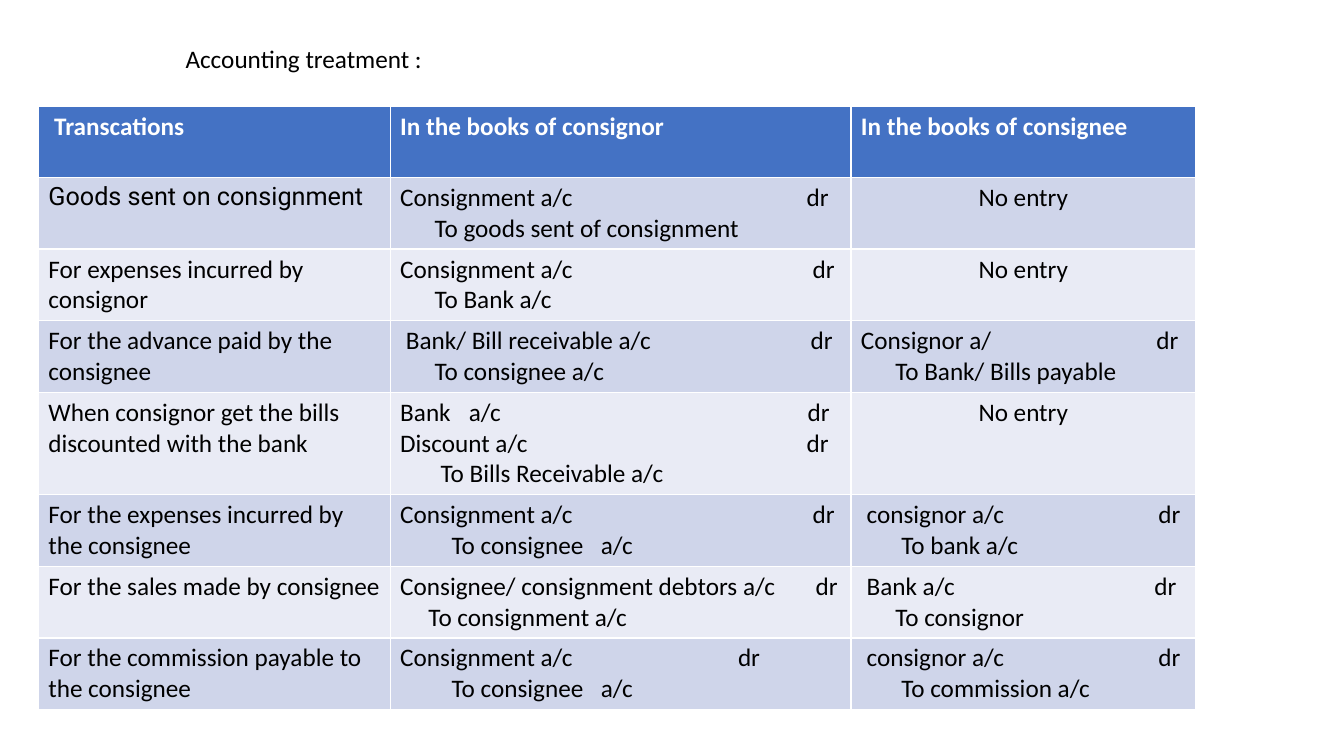
from lxml import etree
from pptx import Presentation
from pptx.dml.color import RGBColor
from pptx.enum.text import MSO_ANCHOR, MSO_AUTO_SIZE, PP_ALIGN
from pptx.oxml.ns import qn
from pptx.util import Inches, Pt

TITLE = "Accounting treatment :"
HEADINGS = [" Transcations", "In the books of consignor", "In the books of consignee"]
NO_ENTRY = [("No entry",)]

# Each journal line is its text followed by its tab stops in inches.
ENTRIES = [
    ("Goods sent on consignment",
     [("Consignment a/c\tdr", 4.03), ("\tTo goods sent of consignment", 0.34)],
     NO_ENTRY),
    ("For expenses incurred by consignor",
     [("Consignment a/c\tdr", 4.09), ("\tTo Bank a/c", 0.34)],
     NO_ENTRY),
    ("For the advance paid by the consignee",
     [(" Bank/ Bill receivable a/c\tdr", 4.07), ("\tTo consignee a/c", 0.34)],
     [("Consignor a/\tdr", 2.93), ("\tTo Bank/ Bills payable", 0.34)]),
    ("When consignor get the bills discounted with the bank",
     [("Bank\ta/c\tdr", 0.68, 4.04), ("Discount a/c\tdr", 4.03),
      ("\tTo Bills Receivable a/c", 0.4)],
     NO_ENTRY),
    ("For the expenses incurred by the consignee",
     [("Consignment a/c\tdr", 4.09), ("\tTo consignee\ta/c", 0.51, 1.99)],
     [(" consignor a/c\tdr", 2.95), ("\tTo bank a/c", 0.4)]),
    ("For the sales made by consignee",
     [("Consignee/ consignment debtors a/c\tdr", 4.12), ("\tTo consignment a/c", 0.28)],
     [(" Bank a/c\tdr", 2.91), ("\tTo consignor", 0.34)]),
    ("For the commission payable to the consignee",
     [("Consignment a/c\tdr", 3.35), ("\tTo consignee\ta/c", 0.51, 1.99)],
     [(" consignor a/c\tdr", 2.95), ("\tTo commission a/c", 0.4)]),
]

COLUMN_WIDTHS = [3.49, 4.57, 3.42]
ROW_HEIGHT, LINE_HEIGHT = 0.7, 0.3
TABLE_LEFT, TABLE_TOP = 0.38, 1.06
FONT, FIRST_ENTRY_FONT = "Calibri", "Roboto"
BLACK = RGBColor(0x00, 0x00, 0x00)
WHITE = RGBColor(0xFF, 0xFF, 0xFF)
HEADER_BLUE = RGBColor(0x44, 0x72, 0xC4)
BANDS = [RGBColor(0xCF, 0xD5, 0xEA), RGBColor(0xE9, 0xEB, 0xF5)]


def add_text(paragraph, text, color=BLACK, bold=False, font=FONT):
    run = paragraph.add_run()
    run.text = text
    run.font.name = font
    run.font.size = Pt(18)
    run.font.bold = bold
    run.font.color.rgb = color


def set_tab_stops(paragraph, stops):
    tab_list = etree.SubElement(paragraph._p.get_or_add_pPr(), qn("a:tabLst"))
    for stop in stops:
        etree.SubElement(tab_list, qn("a:tab"), pos=str(Inches(stop)), algn="l")


def fill_cell(cell, lines, fill, **text_format):
    cell.fill.solid()
    cell.fill.fore_color.rgb = fill
    frame = cell.text_frame
    for index, (text, *stops) in enumerate(lines):
        paragraph = frame.add_paragraph() if index else frame.paragraphs[0]
        if stops:
            set_tab_stops(paragraph, stops)
        if lines is NO_ENTRY:
            paragraph.alignment = PP_ALIGN.CENTER
        add_text(paragraph, text, **text_format)


def add_title(slide):
    title = slide.shapes.title
    title.left, title.top = Inches(1.74), Inches(0.38)
    title.width, title.height = Inches(10.28), Inches(0.4)
    frame = title.text_frame
    frame.auto_size = MSO_AUTO_SIZE.NONE
    frame.vertical_anchor = MSO_ANCHOR.TOP
    frame.paragraphs[0].alignment = PP_ALIGN.LEFT
    add_text(frame.paragraphs[0], TITLE)


def add_journal_table(slide):
    row_heights = [ROW_HEIGHT] + [
        ROW_HEIGHT + LINE_HEIGHT * (len(consignor) - 2) for _, consignor, _ in ENTRIES]
    table = slide.shapes.add_table(
        len(row_heights), len(COLUMN_WIDTHS), Inches(TABLE_LEFT), Inches(TABLE_TOP),
        Inches(sum(COLUMN_WIDTHS)), Inches(sum(row_heights))).table
    for column, width in zip(table.columns, COLUMN_WIDTHS):
        column.width = Inches(width)
    for row, height in zip(table.rows, row_heights):
        row.height = Inches(height)

    for column, heading in enumerate(HEADINGS):
        fill_cell(table.cell(0, column), [(heading,)], HEADER_BLUE, color=WHITE, bold=True)
    for row, (transaction, consignor, consignee) in enumerate(ENTRIES, start=1):
        band = BANDS[(row - 1) % 2]
        font = FIRST_ENTRY_FONT if row == 1 else FONT
        fill_cell(table.cell(row, 0), [(transaction,)], band, font=font)
        fill_cell(table.cell(row, 1), consignor, band)
        fill_cell(table.cell(row, 2), consignee, band)


def main():
    presentation = Presentation()
    presentation.slide_width, presentation.slide_height = Inches(13.33), Inches(7.5)
    slide = presentation.slides.add_slide(presentation.slide_layouts[5])
    add_title(slide)
    add_journal_table(slide)
    presentation.save("out.pptx")


if __name__ == "__main__":
    main()
